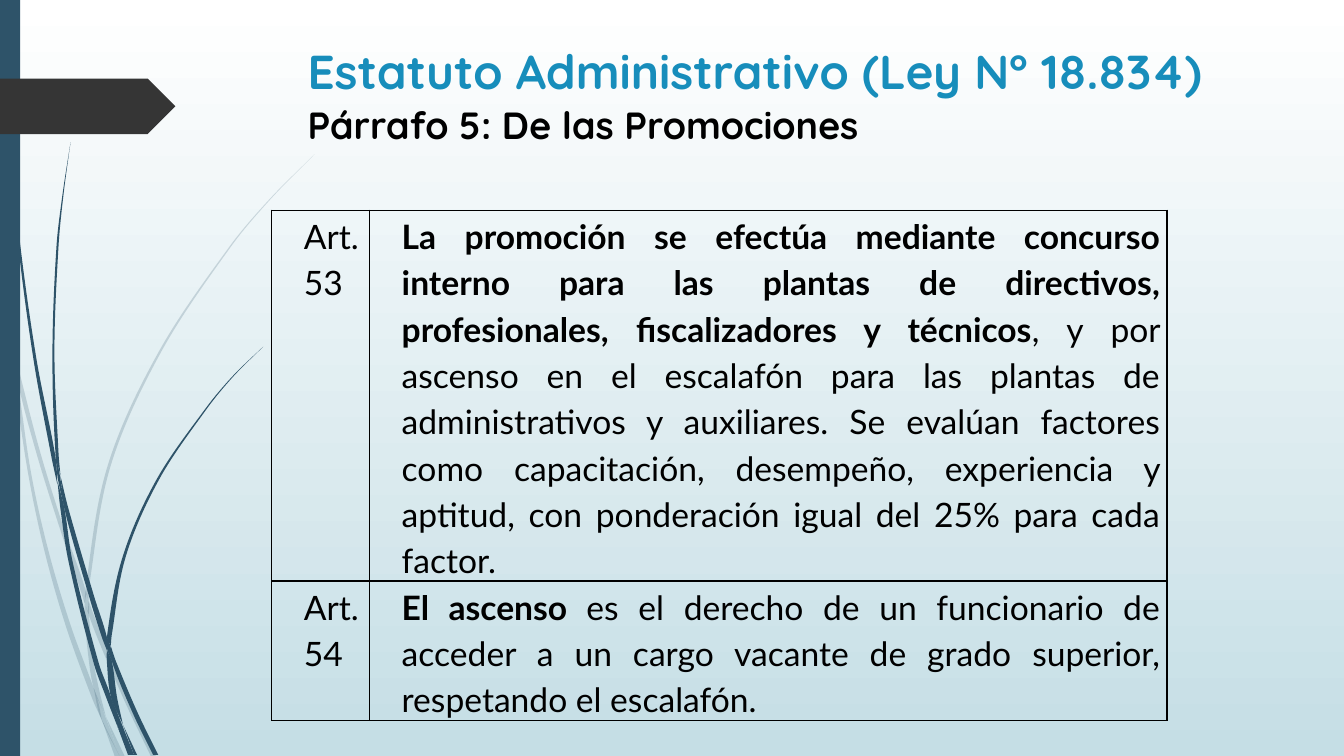
from dataclasses import dataclass

from lxml.etree import SubElement
from pptx import Presentation
from pptx.dml.color import RGBColor
from pptx.enum.shapes import MSO_SHAPE as SHAPE
from pptx.enum.text import MSO_ANCHOR as ANCHOR, PP_ALIGN as ALIGN
from pptx.oxml.ns import qn
from pptx.util import Emu, Inches, Pt


@dataclass(frozen=True)
class Theme:
    stem: str = "2E5369"
    arrow: str = "353535"
    accent: str = "178DBB"
    ink: str = "000000"
    sky: tuple = ("FFFFFF", "C5DEE5")
    pale_alpha: int = 20
    title_font: str = "Quicksand"
    body_font: str = "Lato"
    title_size: int = 34
    subtitle_size: int = 27
    body_size: int = 24
    border: int = 1


CELL = Inches(0.1)  # the grid is 133.3 columns by 75 rows
COLS, ROWS = 133.3, 75


def grid(n):
    return Emu(round(n * CELL))


def bezier_edge(points):
    """Return start, control and end points of a smooth curve x(y)."""
    def slope(i):
        (x0, y0), (x1, y1) = points[max(i - 1, 0)], points[min(i + 1, len(points) - 1)]
        return (x1 - x0) / (y1 - y0)

    edge = [points[0]]
    for i, ((x0, y0), (x1, y1)) in enumerate(zip(points, points[1:])):
        third = (y1 - y0) / 3
        edge += [(x0 + slope(i) * third, y0 + third),
                 (x1 - slope(i + 1) * third, y1 - third), (x1, y1)]
    return edge


def lines_to_curves(path):
    """Merge line triples into cubic curves, keeping the middle line straight."""
    lines = path.findall(qn("a:lnTo"))
    del lines[len(lines) // 2]
    for triple in zip(*[iter(lines)] * 3):
        curve = SubElement(path, qn("a:cubicBezTo"))
        triple[0].addprevious(curve)
        for line in triple:
            curve.append(line[0])
            path.remove(line)


class Deck:
    """Holds the theme, the presentation and the current slide."""

    def __init__(self, theme):
        self.theme = theme
        self.prs = Presentation()
        self.prs.slide_width, self.prs.slide_height = grid(COLS), grid(ROWS)
        self.s = self.prs.slides.add_slide(self.prs.slide_layouts[5])

    def background(self):
        fill = self.s.background.fill
        fill.gradient()
        fill.gradient_angle = 270
        for stop, color in zip(fill.gradient_stops, self.theme.sky):
            stop.color.rgb = RGBColor.from_string(color)

    def paint(self, sp, color, alpha=None):
        sp.shadow.inherit = False
        sp.line.fill.background()
        sp.fill.solid()
        sp.fill.fore_color.rgb = RGBColor.from_string(color)
        if alpha is not None:
            clr = sp.fill._xPr.find(qn("a:solidFill"))[0]
            SubElement(clr, qn("a:alpha"), val=str(alpha * 1000))

    def shape(self, kind, x, y, w, h, color):
        sp = self.s.shapes.add_shape(kind, *map(grid, (x, y, w, h)))
        self.paint(sp, color)

    def blade(self, knots, alpha=None):
        left = bezier_edge([(x - w / 2, y) for x, y, w in knots])
        right = bezier_edge([(x + w / 2, y) for x, y, w in knots])
        points = [(grid(x), grid(y)) for x, y in left + right[::-1]]
        builder = self.s.shapes.build_freeform(*points[0])
        builder.add_line_segments(points[1:], close=True)
        sp = builder.convert_to_shape()
        lines_to_curves(next(sp._element.iter(qn("a:path"))))
        self.paint(sp, self.theme.stem, alpha)

    def run(self, p, text, font, size, color, bold=False):
        r = p.add_run()
        r.text = text
        r.font.name, r.font.size, r.font.bold = font, Pt(size), bold
        r.font.color.rgb = RGBColor.from_string(color)

    def paragraph_format(self, p, align, spacing):
        p.alignment, p.line_spacing, p.space_after = align, spacing, Pt(8)
        pPr = p._p.get_or_add_pPr()
        pPr.set("marL", str(grid(2.5)))
        pPr.set("indent", "0")

    def title(self, x, y, w, h, heading, subheading):
        th, sp = self.theme, self.s.shapes.title
        self.s.shapes._spTree.append(sp._element)
        sp.left, sp.top, sp.width, sp.height = map(grid, (x, y, w, h))
        tf = sp.text_frame
        tf.word_wrap, tf.vertical_anchor = True, ANCHOR.BOTTOM
        tf.margin_bottom = grid(6.2)
        p = tf.paragraphs[0]
        self.paragraph_format(p, ALIGN.LEFT, 1.07)
        self.run(p, heading, th.title_font, th.title_size, th.accent, True)
        p.add_line_break()
        self.run(p, subheading, th.title_font, th.subtitle_size, th.ink, True)

    def borders(self, cell):
        tcPr = cell._tc.get_or_add_tcPr()
        for side in "LRTB":
            ln = SubElement(tcPr, qn(f"a:ln{side}"), w=str(Pt(self.theme.border)))
            fill = SubElement(ln, qn("a:solidFill"))
            SubElement(fill, qn("a:srgbClr"), val=self.theme.ink)

    def table(self, x, y, widths, heights, rows):
        """Each cell is a list of (text, bold) runs."""
        th = self.theme
        table = self.s.shapes.add_table(
            len(heights), len(widths),
            *map(grid, (x, y, sum(widths), sum(heights)))).table
        table.first_row = table.horz_banding = False
        for col, w in zip(table.columns, widths):
            col.width = grid(w)
        for row, h, contents in zip(table.rows, heights, rows):
            row.height = grid(h)
            for cell, runs in zip(row.cells, contents):
                cell.margin_left = cell.margin_right = grid(0.7)
                cell.margin_top = cell.margin_bottom = 0
                self.borders(cell)
                cell.fill.background()
                p = cell.text_frame.paragraphs[0]
                self.paragraph_format(p, ALIGN.JUSTIFY, 1.15)
                for text, bold in runs:
                    self.run(p, text, th.body_font, th.body_size, th.ink, bold)


# Centre x, y and width along each blade of grass, from top to bottom
PALE_BLADES = [
    [(0.05, 28.2, 0.1), (0.55, 31.6, 0.3), (1.1, 35, 0)],
    [(1.4, 34.5, 0), (1.9, 37.6, 0.4), (3.8, 44.9, 0.4), (6, 52, 0.4), (8.25, 58.6, 0.5), (8.4, 59.9, 0)],
    [(8.8, 59.6, 0), (9.05, 61, 0.5), (12.5, 69.3, 0.5), (15.25, 75.1, 0.5)],
    [(10.5, 71.1, 0), (12.15, 75.1, 0.5)],
    [(1.1, 35, 0), (1.55, 37.6, 0.3), (2.95, 47, 0.3), (4.6, 54.6, 0.4),
     (6.75, 62, 0.5), (9.4, 69.3, 0.5), (10.1, 71.4, 0)],
    [(8.4, 59.9, 0), (8.6, 61, 0.4), (8.9, 64.6, 0.4), (9.55, 68.3, 0.5), (10.5, 71.1, 0)],
    [(31.2, 15.3, 0), (26.8, 19.75, 0.1), (22.85, 24.45, 0.15), (15.9, 34.85, 0.25),
     (10.85, 46.15, 0.3), (8.65, 58.4, 0.3), (8.8, 59.6, 0)],
    [(10.1, 71.4, 0), (11.65, 75.1, 0.5)],
    [(8.5, 58.6, 0), (8.6, 59.7, 0.4), (8.8, 61, 0)],
    [(9.3, 68.3, 0), (10.2, 71.1, 0.5), (11.9, 75.1, 0)],
]
DARK_BLADES = [
    [(0.35, 0, 0.1), (0.75, 11, 0.1), (1.8, 23.3, 0.2), (3.45, 35.5, 0.3), (5.3, 45.3, 0.4), (5.7, 48.1, 0)],
    [(6, 47.2, 0), (6.6, 50.5, 0.4), (9.1, 59.2, 0.5), (10.35, 63.2, 0.5), (10.6, 64.5, 0)],
    [(11, 64.1, 0), (11.3, 65.6, 0.4), (13.4, 70.7, 0.5), (15.45, 74.9, 0.5)],
    [(5.7, 47.7, 0), (6.2, 50.5, 0.4), (7, 55.7, 0.4), (9.55, 65.8, 0.5), (10.75, 69.1, 0.5), (11.7, 72.2, 0)],
    [(7, 14.1, 0), (6.25, 19.3, 0.1), (5.7, 24.5, 0.2), (5.3, 34.9, 0.2), (5.65, 44.9, 0.3), (6, 47.2, 0)],
    [(12.2, 71.9, 0), (13.45, 74.9, 0.3)],
    [(5.5, 44.9, 0), (5.85, 47.4, 0.25), (6.4, 50.5, 0)],
    [(26.1, 34.4, 0), (23.1, 37.35, 0.1), (20.45, 40.55, 0.15), (15.7, 47.5, 0.25),
     (12.35, 55.15, 0.3), (10.85, 63.1, 0.45), (11, 64.1, 0)],
    [(11.7, 72.2, 0), (12.9, 74.9, 0.4)],
    [(10.6, 64.5, 0), (10.85, 65.6, 0.5), (11.3, 69.1, 0.6), (12.2, 71.9, 0)],
    [(10.6, 63.1, 0), (10.8, 64.3, 0.4), (11.1, 65.6, 0)],
    [(11, 69.1, 0), (11.9, 72, 0.5), (13.15, 74.9, 0.3)],
]
PROMOTION = [
    ("La promoción se efectúa mediante concurso interno para las plantas de "
     "directivos, profesionales, fiscalizadores y técnicos", True),
    (", y por ascenso en el escalafón para las plantas de administrativos y "
     "auxiliares. Se evalúan factores como capacitación, desempeño, experiencia "
     "y aptitud, con ponderación igual del 25% para cada factor.", False)]
ASCENT = [("El ascenso ", True),
          ("es el derecho de un funcionario de acceder a un cargo vacante de "
           "grado superior, respetando el escalafón.", False)]

theme = Theme()
deck = Deck(theme)
deck.background()
for blades, alpha in ((PALE_BLADES, theme.pale_alpha), (DARK_BLADES, None)):
    for knots in blades:
        deck.blade(knots, alpha)
deck.shape(SHAPE.RECTANGLE, 0, 0, 2, ROWS, theme.stem)
deck.shape(SHAPE.PENTAGON, 0, 7.8, 17.4, 5.5, theme.arrow)
deck.title(27, 1.2, 97.5, 19.6, "Estatuto Administrativo (Ley N° 18.834)", "Párrafo 5: De las Promociones")
deck.table(26.95, 20.85, (9.7, 79.1), (36.7, 13.8),
           [[[("Art. 53", False)], PROMOTION], [[("Art. 54", False)], ASCENT]])
deck.prs.save("out.pptx")
